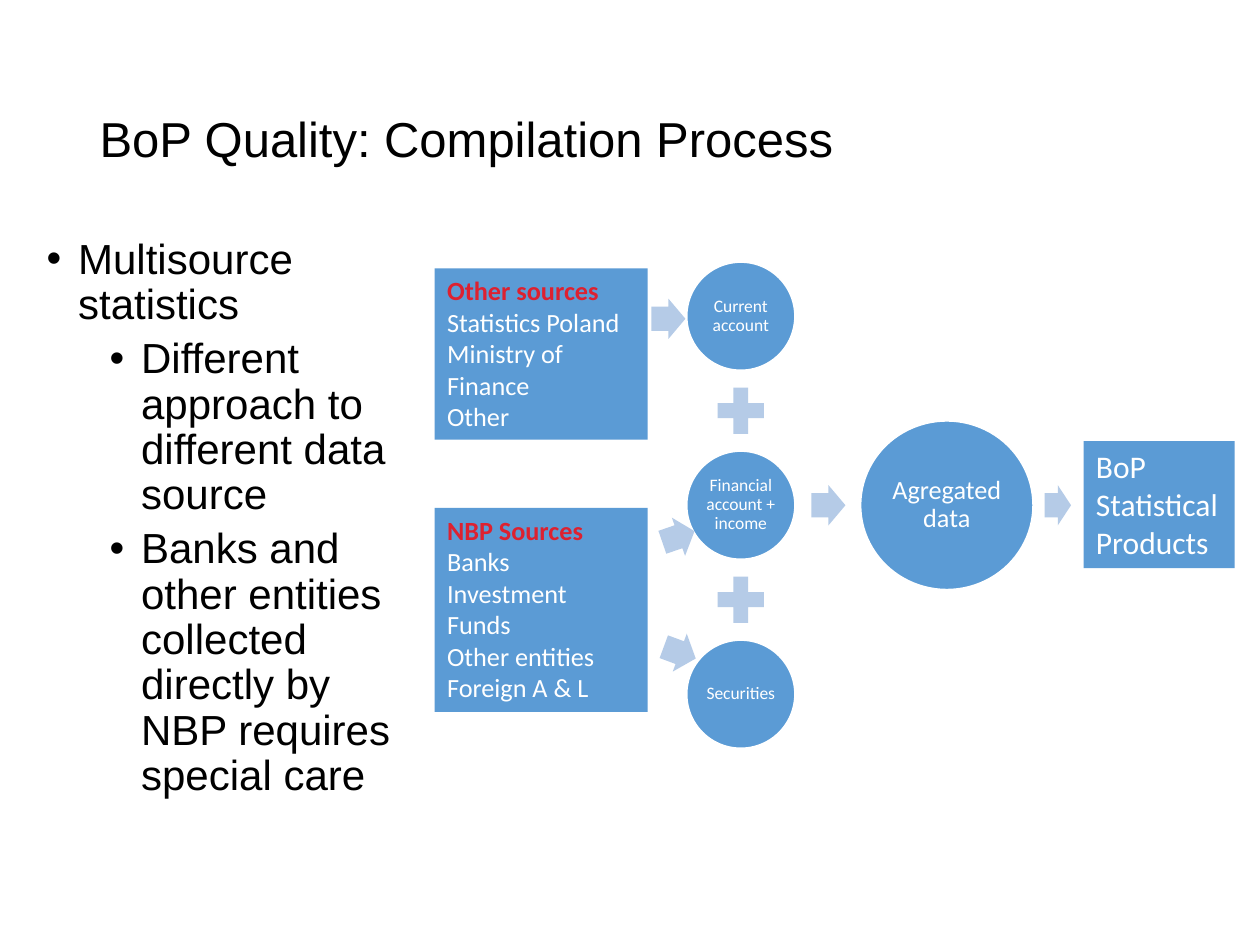
from lxml.etree import SubElement
from pptx import Presentation
from pptx.dml.color import RGBColor
from pptx.enum.shapes import MSO_SHAPE
from pptx.enum.text import MSO_ANCHOR, MSO_AUTO_SIZE, PP_ALIGN
from pptx.oxml.ns import qn
from pptx.util import Pt

PX = 9144  # one px is a hundredth of an inch
BLACK = RGBColor(0x00, 0x00, 0x00)
WHITE = RGBColor(0xFF, 0xFF, 0xFF)
BLUE = RGBColor(0x5B, 0x9B, 0xD5)
PALE_BLUE = RGBColor(0xB5, 0xCB, 0xE7)
RED = RGBColor(0xDD, 0x21, 0x30)


class SlideBuilder:
    heading_font = "Arial"
    diagram_font = "Calibri"

    def __init__(self, page):
        self.page = page

    def add_span(self, para, text, size, font, color, bold=False):
        span = para.add_run()
        span.text = text
        span.font.size = Pt(size)
        span.font.name = font
        span.font.bold = bold
        span.font.color.rgb = color

    def place(self, holder, left, top, width, height, anchor):
        holder.left, holder.top = left * PX, top * PX
        holder.width, holder.height = width * PX, height * PX
        frame = holder.text_frame
        frame.word_wrap = True
        frame.auto_size = MSO_AUTO_SIZE.NONE
        frame.vertical_anchor = anchor
        return frame

    def title(self, text, *area):
        frame = self.place(self.page.shapes.title, *area, MSO_ANCHOR.MIDDLE)
        para = frame.paragraphs[0]
        para.alignment = PP_ALIGN.LEFT
        para.line_spacing = 0.9
        self.add_span(para, text, 28, self.heading_font, BLACK)

    def bullets(self, items, *area):
        frame = self.place(self.page.placeholders[1], *area, MSO_ANCHOR.TOP)
        for index, (level, text) in enumerate(items):
            para = frame.add_paragraph() if index else frame.paragraphs[0]
            para.level = level
            para.line_spacing = 0.9
            para.space_before = Pt(5 if index else 0)
            properties = para._p.get_or_add_pPr()
            properties.set("marL", str((25 + 50 * level) * PX))
            properties.set("indent", str(-25 * PX))
            SubElement(properties, qn("a:buFont")).set("typeface", "Arial")
            SubElement(properties, qn("a:buChar")).set("char", "•")
            self.add_span(para, text, 24, self.heading_font, BLACK)

    def shape(self, kind, left, top, width, height, fill):
        shape = self.page.shapes.add_shape(
            kind, left * PX, top * PX, width * PX, height * PX)
        shape.shadow.inherit = False
        shape.fill.solid()
        shape.fill.fore_color.rgb = fill
        shape.line.fill.background()
        return shape

    def circle(self, text, size, margin, *area):
        circle = self.shape(MSO_SHAPE.OVAL, *area, BLUE)
        circle.line.color.rgb = WHITE
        circle.line.width = Pt(1)
        frame = circle.text_frame
        frame.word_wrap = True
        frame.vertical_anchor = MSO_ANCHOR.MIDDLE
        frame.margin_left = frame.margin_right = margin * PX
        frame.margin_top = frame.margin_bottom = margin * PX
        para = frame.paragraphs[0]
        para.alignment = PP_ALIGN.CENTER
        para.line_spacing = 0.9
        self.add_span(para, text, size, self.diagram_font, WHITE)

    def box(self, lines, size, *area, heading=None):
        frame = self.shape(MSO_SHAPE.RECTANGLE, *area, BLUE).text_frame
        frame.word_wrap = True
        frame.vertical_anchor = MSO_ANCHOR.TOP
        texts = [heading, *lines] if heading else lines
        for index, text in enumerate(texts):
            para = frame.add_paragraph() if index else frame.paragraphs[0]
            para.alignment = PP_ALIGN.LEFT
            is_heading = text == heading
            self.add_span(para, text, size, self.diagram_font,
                          RED if is_heading else WHITE, is_heading)

    def plus(self, *area):
        self.shape(MSO_SHAPE.MATH_PLUS, *area, PALE_BLUE)

    def arrow(self, left, top, width=27, rotation=0):
        arrow = self.shape(MSO_SHAPE.RIGHT_ARROW, left, top, width, 32, PALE_BLUE)
        arrow.adjustments[0] = 0.6
        arrow.adjustments[1] = 0.5
        arrow.rotation = rotation


def main():
    deck = Presentation()
    deck.slide_width, deck.slide_height = 1000 * PX, 750 * PX
    builder = SlideBuilder(deck.slides.add_slide(deck.slide_layouts[1]))

    # Title and list
    builder.title("BoP Quality: Compilation Process", 69, 40, 862, 145)
    builder.bullets([
        (0, "Multisource statistics"),
        (1, "Different approach to different data source"),
        (1, "Banks and other entities collected directly by NBP requires special care"),
    ], 27, 184, 317, 476)

    # Accounts that are added up, one every 150 px
    accounts = ["Current account", "Financial account + income", "Securities"]
    for row, account in enumerate(accounts):
        top = 208 + 150 * row
        if row:
            builder.plus(563, top - 57, 50, 50)
        builder.circle(account, 10, 1, 545, top, 86, 86)

    # Aggregation and result
    builder.arrow(644, 385)
    builder.circle("Agregated data", 15, 2, 683, 334, 137, 134)
    builder.arrow(829, 385, width=21)
    builder.box(["BoP", "Statistical Products"], 18, 860, 350, 120, 101)

    # Data sources
    builder.box(["Statistics Poland", "Ministry of Finance", "Other"],
                15, 345, 213, 169, 136, heading="Other sources")
    builder.box(["Banks", "Investment Funds", "Other entities", "Foreign A & L"],
                15, 345, 403, 169, 162, heading="NBP Sources")
    builder.arrow(517, 237)
    builder.arrow(525, 410, rotation=341)
    builder.arrow(526, 502, rotation=20.3)

    deck.save("out.pptx")


if __name__ == "__main__":
    main()
